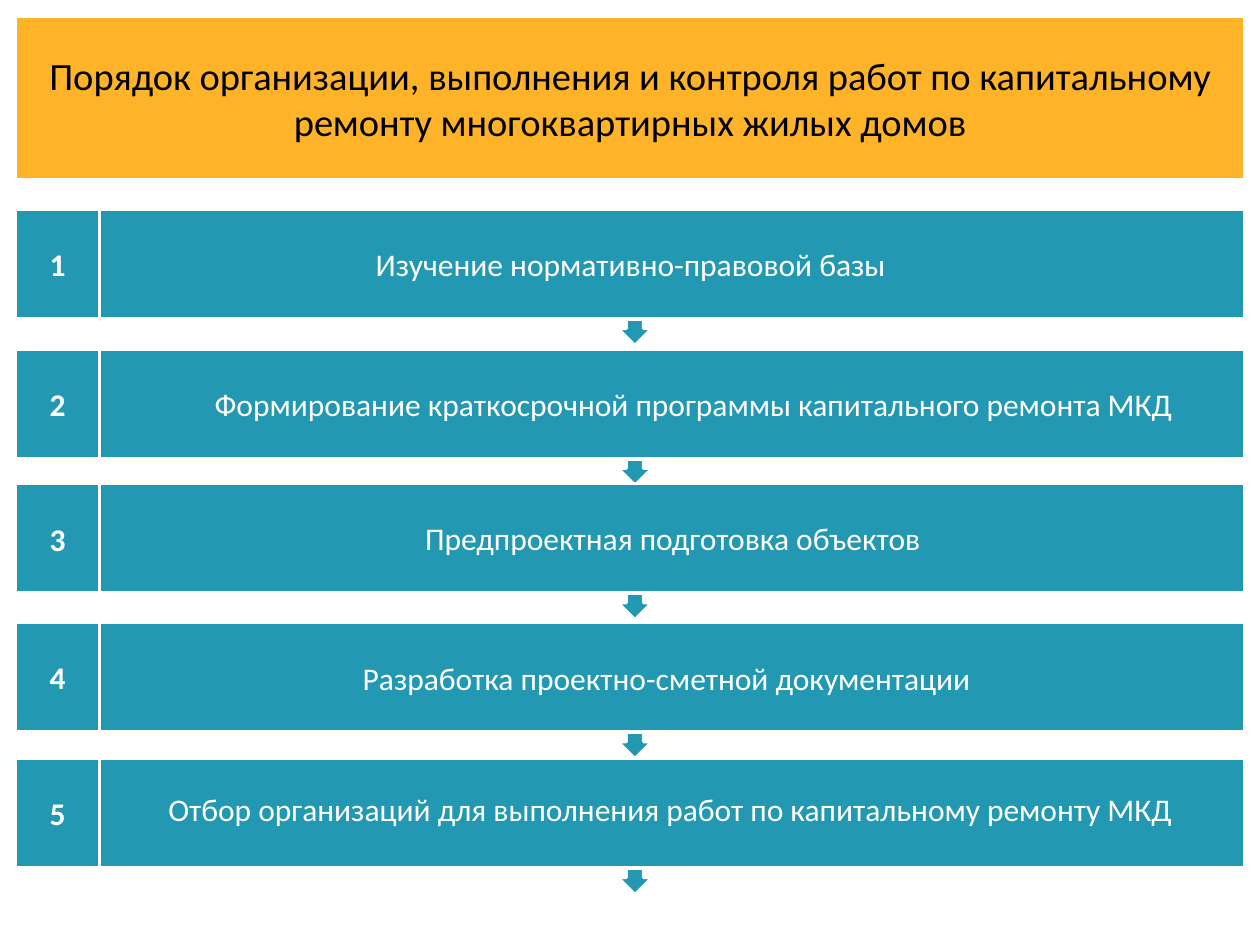
from pptx import Presentation
from pptx.dml.color import RGBColor
from pptx.enum.shapes import MSO_SHAPE
from pptx.enum.text import MSO_ANCHOR, MSO_AUTO_SIZE, PP_ALIGN
from pptx.util import Cm, Pt

RECT = MSO_SHAPE.RECTANGLE
ARROW = MSO_SHAPE.DOWN_ARROW_CALLOUT
MIDDLE = MSO_ANCHOR.MIDDLE
CENTER = PP_ALIGN.CENTER
COLORS = {"amber": "FFB329", "teal": "2398B3", "white": "FFFFFF", "black": "000000"}


def paint(shape, fill):
    shape.fill.solid()
    shape.fill.fore_color.rgb = RGBColor.from_string(COLORS[fill])
    shape.line.color.rgb = RGBColor.from_string(COLORS["white"])
    shape.line.width = Pt(2)


def write(shape, text, size=18, color="white", bold=False, anchor=MIDDLE):
    frame = shape.text_frame
    frame.word_wrap = True
    frame.vertical_anchor = anchor
    paragraph = frame.paragraphs[0]
    paragraph.alignment = CENTER
    run = paragraph.add_run()
    run.text = text
    run.font.name = "Calibri"
    run.font.size = Pt(size)
    run.font.bold = bold
    run.font.color.rgb = RGBColor.from_string(COLORS[color])


prs = Presentation()
prs.slide_width, prs.slide_height = Cm(25.4), Cm(19.05)
slide = prs.slides.add_slide(prs.slide_layouts[5])

# Heading
heading = slide.shapes.title
heading.left, heading.top, heading.width, heading.height = Cm(0.31), Cm(0.33), Cm(24.79), Cm(3.3)
paint(heading, "amber")
heading.text_frame.auto_size = MSO_AUTO_SIZE.NONE
write(heading, "Порядок организации, выполнения и контроля работ по капитальному "
               "ремонту многоквартирных жилых домов", 22, "black")

# Step bars: top, wording inside the bar, left inset
steps = [
    (4.22, "Изучение нормативно-правовой базы", 0.25),
    (7.04, "Формирование краткосрочной программы капитального ремонта МКД", 2.79),
    (9.75, None, 0.25),
    (12.55, None, 0.25),
    (15.29, None, 0.25),
]
for number, (top, wording, inset) in enumerate(steps, 1):
    group = slide.shapes.add_group_shape()
    arrow = group.shapes.add_shape(ARROW, Cm(11.9), Cm(top + 1.35), Cm(1.8), Cm(1.4))
    bar = group.shapes.add_shape(RECT, Cm(0.33), Cm(top), Cm(24.77), Cm(2.21))
    badge = group.shapes.add_shape(RECT, Cm(0.31), Cm(top), Cm(1.7), Cm(2.21))
    for part in (arrow, bar, badge):
        part.shadow.inherit = False
        paint(part, "teal")
    if wording:
        write(bar, wording)
        bar.text_frame.margin_left = Cm(inset)
    write(badge, str(number), bold=True)

# Wording laid over steps 3 to 5: left, top, width
captions = [
    (2.26, 10.34, 22.61, "Предпроектная подготовка объектов"),
    (2.01, 13.16, 22.86, "Разработка проектно-сметной документации"),
    (1.96, 15.8, 23.11, "Отбор организаций для выполнения работ по капитальному ремонту МКД"),
]
for left, top, width, wording in captions:
    caption = slide.shapes.add_textbox(Cm(left), Cm(top), Cm(width), Cm(1.02))
    caption.text_frame.auto_size = MSO_AUTO_SIZE.SHAPE_TO_FIT_TEXT
    write(caption, wording, anchor=MSO_ANCHOR.TOP)

prs.save("out.pptx")
